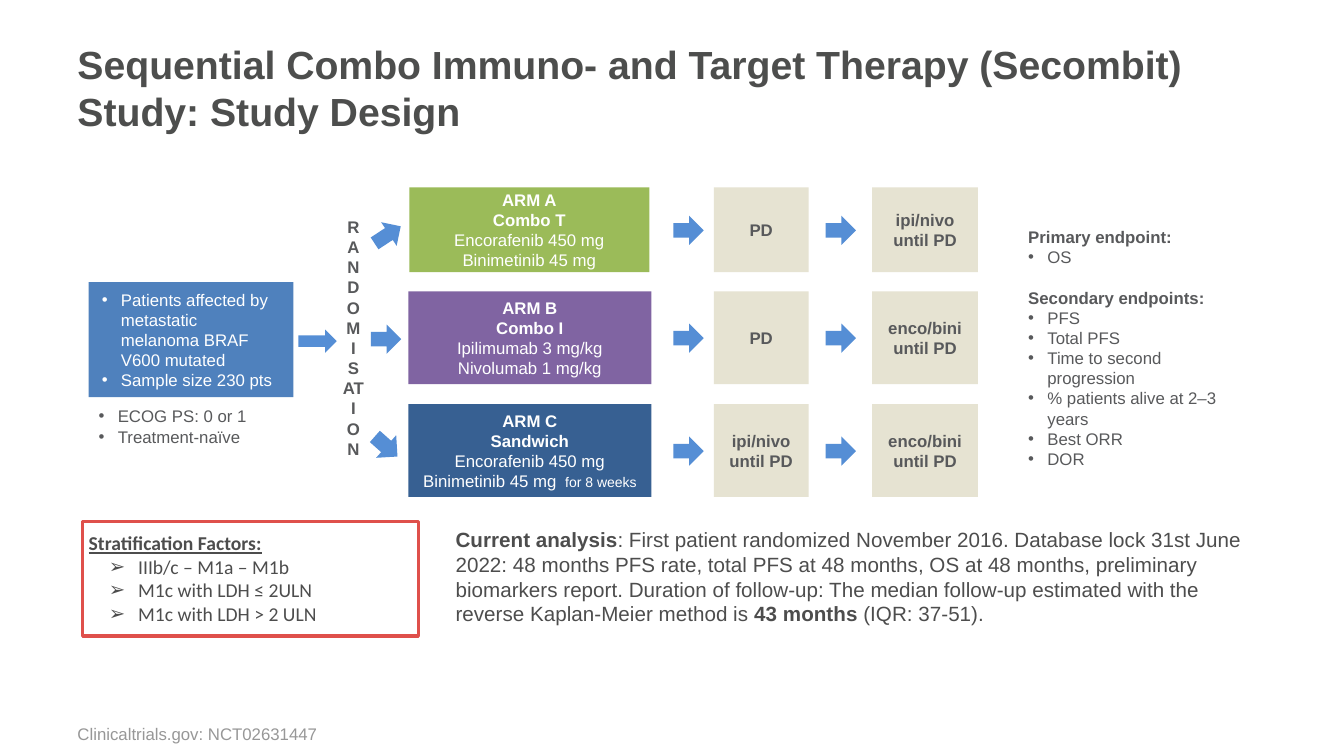
from dataclasses import dataclass

from pptx import Presentation
from pptx import util as u
from pptx.dml import color
from pptx.enum import shapes, text
from pptx.oxml import xmlchemy as xml

Inches, Pt = u.Inches, u.Pt
Kind = shapes.MSO_SHAPE
Anchor = text.MSO_ANCHOR
Align = text.PP_ALIGN


@dataclass(frozen=True)
class Theme:
    font: str = "Arial"
    factor_font: str = "Calibri"
    title_ink: str = "4D4E4D"
    note_ink: str = "4D4D4D"
    ink: str = "58595B"
    source_ink: str = "979797"
    white: str = "FFFFFF"
    blue: str = "4F81BD"
    arrow: str = "558ED5"
    green: str = "9BBB59"
    purple: str = "8064A2"
    navy: str = "376092"
    beige: str = "E6E3D2"
    red: str = "DF504B"
    title: float = 28
    analysis: float = 14.7
    factor: float = 14
    body: float = 12
    small: float = 10


@dataclass(frozen=True)
class Line:
    words: str
    bold: bool = False
    bullet: str = ""
    before: float = 0
    underline: bool = False


THEME = Theme()
PADDING = (0.13, 0.07, 0.13, 0.07)


def rgb(value):
    return color.RGBColor.from_string(value)


def add_bullet(para, mark, margin, hang):
    props = para._p.get_or_add_pPr()
    props.set("marL", str(Inches(margin)))
    props.set("indent", str(-Inches(hang)))
    font = xml.OxmlElement("a:buFont")
    font.set("typeface", THEME.font)
    char = xml.OxmlElement("a:buChar")
    char.set("char", mark)
    props.extend([font, char])


def style(font, ink, size, name=THEME.font, bold=False):
    font.name = name
    font.size = Pt(size)
    font.bold = bold
    font.color.rgb = rgb(ink)


def write_lines(shape, lines, ink=THEME.ink, size=THEME.body, name=THEME.font,
                align=Align.LEFT, anchor=Anchor.TOP, insets=(0.1, 0.05, 0.1, 0.05),
                margin=0.19, hang=0.19):
    frame = shape.text_frame
    frame.word_wrap = True
    frame.vertical_anchor = anchor
    frame.margin_left, frame.margin_top, frame.margin_right, frame.margin_bottom = map(Inches, insets)
    for index, line in enumerate(lines):
        para = frame.add_paragraph() if index else frame.paragraphs[0]
        para.text = line.words
        para.alignment = align
        if line.before:
            para.space_before = Pt(line.before)
        if line.bullet:
            add_bullet(para, line.bullet, margin, hang)
        style(para.font, ink, size, name, line.bold)
        para.font.underline = line.underline
    return frame


def add_text(page, box, lines, **options):
    label = page.shapes.add_textbox(*map(Inches, box))
    return write_lines(label, lines, **options)


def add_block(page, box, fill=None, kind=Kind.RECTANGLE):
    block = page.shapes.add_shape(kind, *map(Inches, box))
    block.shadow.inherit = False
    block.line.fill.background()
    if fill:
        block.fill.solid()
        block.fill.fore_color.rgb = rgb(fill)
    else:
        block.fill.background()
    return block


def add_panel(page, box, fill, lines, ink=THEME.ink, align=Align.CENTER):
    block = add_block(page, box, fill)
    return write_lines(block, lines, ink, align=align, anchor=Anchor.MIDDLE, insets=PADDING)


def add_arrow(page, box, rotation=0):
    add_block(page, box, THEME.arrow, Kind.RIGHT_ARROW).rotation = rotation


def bullets(*items, mark="•"):
    return [Line(item, bullet=mark) for item in items]


def bold(*items):
    return [Line(item, bold=True) for item in items]


def add_patients(page, left, top):
    criteria = bullets("Patients affected by metastatic melanoma BRAF V600 mutated", "Sample size 230 pts")
    add_panel(page, (left, top, 2.03, 1.14), THEME.blue, criteria, THEME.white, Align.LEFT)
    add_text(page, (left, top + 1.18, 2.48, 0.5), bullets("ECOG PS: 0 or 1", "Treatment-naïve"))


def add_randomisation(page, left, top):
    add_panel(page, (left, top, 0.47, 2.76), THEME.white, bold("RANDOM", "I", "SAT", "I", "ON"))
    add_arrow(page, (left - 0.31, top + 1.3, 0.38, 0.23))
    add_arrow(page, (left + 0.42, top + 0.22, 0.31, 0.28), 326.8)
    add_arrow(page, (left + 0.41, top + 1.25, 0.3, 0.29))
    add_arrow(page, (left + 0.41, top + 2.31, 0.3, 0.3), 41.6)


def add_arm(page, box, fill, names, doses, steps, note=""):
    left, top, width, height = box
    lines = bold(*names) + [Line(dose) for dose in doses]
    frame = add_panel(page, box, fill, lines, THEME.white)
    if note:
        span = frame.paragraphs[-1].add_run()
        span.text = note
        span.font.size = Pt(THEME.small)
    for step, start, step_width, arrow_start in zip(steps, (7.08, 8.65), (0.94, 1.05), (6.68, 8.19)):
        add_arrow(page, (arrow_start, top + height / 2 - 0.14, 0.3, 0.29))
        add_panel(page, (start, top, step_width, height), THEME.beige, bold(step))


def add_arms(page):
    encorafenib = ("Encorafenib 450 mg", "Binimetinib 45 mg")
    ipilimumab = ("Ipilimumab 3 mg/kg", "Nivolumab 1 mg/kg")
    immuno, target = "ipi/nivo\vuntil PD", "enco/bini until PD"
    add_arm(page, (4.06, 1.86, 2.38, 0.84), THEME.green, ("ARM A", "Combo T"), encorafenib, ("PD", immuno))
    add_arm(page, (4.05, 2.89, 2.41, 0.92), THEME.purple, ("ARM B", "Combo I"), ipilimumab, ("PD", target))
    add_arm(page, (4.05, 4.01, 2.41, 0.92), THEME.navy, ("ARM C", "Sandwich"),
            (encorafenib[0], encorafenib[1] + " "), (immuno, target), "\u00a0for 8 weeks".replace("\u00a0", " "))


def add_endpoints(page, box):
    secondary = ("PFS", "Total PFS", "Time to second progression", "% patients alive at 2–3 years", "Best ORR", "DOR")
    lines = bold("Primary endpoint:") + bullets("OS")
    lines += [Line("Secondary endpoints:", bold=True, before=14.5)] + bullets(*secondary)
    add_text(page, box, lines)


def add_factors(page, box):
    left, top, width, height = box
    factors = [Line("Stratification Factors:", bold=True, underline=True)]
    factors += bullets("IIIb/c – M1a – M1b", "M1c with LDH ≤ 2ULN", "M1c with LDH > 2 ULN", mark="➢")
    add_text(page, (left + 0.06, top + 0.1, 2.35, 0.94), factors, ink=THEME.note_ink, size=THEME.factor,
             name=THEME.factor_font, insets=(0, 0, 0, 0), margin=0.49, hang=0.29)
    border = add_block(page, box)
    border.line.color.rgb = rgb(THEME.red)
    border.line.width = Pt(2.25)


def add_analysis(page, box):
    frame = add_text(page, box, [Line("")], ink=THEME.note_ink, size=THEME.analysis)
    passages = (
        ("Current analysis", True),
        (": First patient randomized November 2016. Database lock 31st June 2022: 48 months PFS rate, "
         "total PFS at 48 months, OS at 48 months, preliminary biomarkers report. Duration of follow-up: "
         "The median follow-up estimated with the reverse Kaplan-Meier method is ", False),
        ("43 months ", True),
        ("(IQR: 37-51).", False),
    )
    for words, strong in passages:
        span = frame.paragraphs[0].add_run()
        span.text = words
        span.font.bold = strong


def add_study_design(deck):
    page = deck.slides.add_slide(deck.slide_layouts[6])
    add_text(page, (0.67, 0.22, 11.75, 1.3),
             bold("Sequential Combo Immuno- and Target Therapy (Secombit) Study: Study Design"),
             ink=THEME.title_ink, size=THEME.title, anchor=Anchor.MIDDLE)
    add_endpoints(page, (10.1, 2.2, 2.26, 2.73))
    add_patients(page, 0.88, 2.8)
    add_randomisation(page, 3.27, 1.97)
    add_arms(page)
    add_factors(page, (0.82, 5.17, 3.33, 1.14))
    add_analysis(page, (4.42, 5.18, 8.31, 1.09))
    add_text(page, (0.67, 6.95, 11.75, 0.48), [Line("Clinicaltrials.gov: NCT02631447")],
             ink=THEME.source_ink, anchor=Anchor.BOTTOM)


def main():
    deck = Presentation()
    deck.slide_width, deck.slide_height = Inches(13.33), Inches(7.5)
    add_study_design(deck)
    deck.save("out.pptx")


if __name__ == "__main__":
    main()
